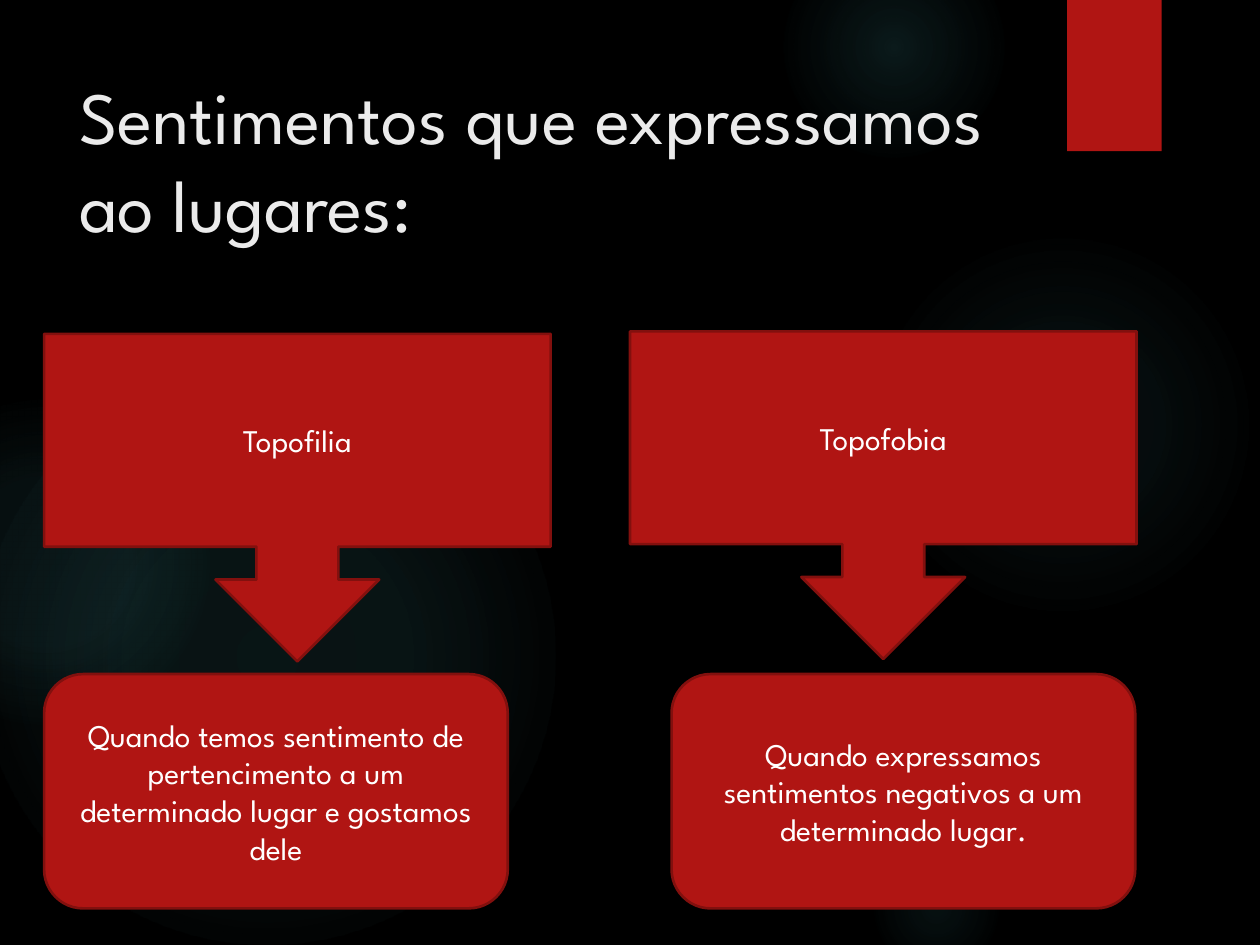
from lxml import etree
from pptx import Presentation
from pptx.dml.color import RGBColor
from pptx.enum.shapes import MSO_SHAPE as Shape
from pptx.enum.text import MSO_ANCHOR as Anchor, PP_ALIGN as Align
from pptx.oxml import parse_xml
from pptx.oxml.ns import nsdecls, qn
from pptx.util import Inches, Pt

GLOW, RED, DARK_RED = "50B9C1", "B01513", "82100E"
WHITE, OFF_WHITE, BLACK = "FFFFFF", "EBEBEB", "000000"


def rgb(hex_color):
    return RGBColor.from_string(hex_color)


class SlideBuilder:
    font_name = "League Spartan"

    def __init__(self, slide):
        self.slide = slide

    def background(self, color):
        fill = self.slide.background.fill
        fill.solid()
        fill.fore_color.rgb = rgb(color)

    def shape(self, kind, left, top, width, height, fill=RED):
        shape = self.slide.shapes.add_shape(
            kind, Inches(left), Inches(top), Inches(width), Inches(height))
        shape.shadow.inherit = False
        shape.fill.solid()
        shape.fill.fore_color.rgb = rgb(fill)
        shape.line.fill.background()
        return shape

    def glow(self, left, top, size, stops):
        """Circle fading outwards; stops are (position, opacity) in percent."""
        circle = self.shape(Shape.OVAL, left, top, size, size)
        stop_xml = "".join(
            f'<a:gs pos="{position * 1000}"><a:srgbClr val="{GLOW}">'
            f'<a:alpha val="{opacity * 1000}"/></a:srgbClr></a:gs>'
            for position, opacity in stops)
        gradient = parse_xml(
            f'<a:gradFill {nsdecls("a")} rotWithShape="1"><a:gsLst>{stop_xml}</a:gsLst>'
            '<a:path path="circle"><a:fillToRect l="50000" t="50000" r="50000" b="50000"/>'
            '</a:path></a:gradFill>')
        properties = circle._element.spPr
        properties.replace(properties.find(qn("a:solidFill")), gradient)

    def ribbon(self, left, top, width, height):
        ribbon = self.shape(Shape.RECTANGLE, left, top, width, height)
        effects = ribbon._element.spPr.find(qn("a:effectLst"))
        shadow = etree.SubElement(
            effects, qn("a:outerShdw"), blurRad=str(Pt(3)), dist=str(Pt(2)),
            dir="5400000", rotWithShape="0")
        color = etree.SubElement(shadow, qn("a:srgbClr"), val=BLACK)
        etree.SubElement(color, qn("a:alpha"), val="45000")

    def set_text(self, frame, text, size, color, align):
        frame.word_wrap = True
        frame.vertical_anchor = Anchor.MIDDLE
        paragraph = frame.paragraphs[0]
        paragraph.text = text
        paragraph.alignment = align
        paragraph.font.name = self.font_name
        paragraph.font.size = Pt(size)
        paragraph.font.color.rgb = rgb(color)

    def title(self, text, left, top, width, height):
        box = self.slide.shapes.add_textbox(
            Inches(left), Inches(top), Inches(width), Inches(height))
        self.set_text(box.text_frame, text, 42, OFF_WHITE, Align.LEFT)

    def card(self, kind, text, left, top, width, height):
        card = self.shape(kind, left, top, width, height)
        card.line.color.rgb = rgb(DARK_RED)
        card.line.width = Pt(1.5)
        self.set_text(card.text_frame, text, 18, WHITE, Align.CENTER)


def main():
    deck = Presentation()
    deck.slide_width, deck.slide_height = Inches(10), Inches(7.5)
    builder = SlideBuilder(deck.slides.add_slide(deck.slide_layouts[6]))

    builder.background(BLACK)
    glows = [
        (6.89, 1.83, 3.08, [(0, 7), (36, 6), (69, 0)]),
        (6.22, -0.5, 1.75, [(0, 14), (36, 7), (73, 0)]),
        (6.89, 6.67, 1.08, [(0, 9), (36, 5), (66, 0)]),
        (-0.17, 2.92, 4.58, [(0, 11), (36, 10), (75, 0)]),
        (-0.92, 3.17, 2.58, [(0, 8), (36, 8), (72, 0)]),
    ]
    for glow in glows:
        builder.glow(*glow)
    builder.ribbon(8.47, 0, 0.75, 1.2)
    builder.title("Sentimentos que expressamos ao lugares:", 0.53, 0.5, 7.72, 1.53)

    feelings = [
        ("Topofilia", 0.35, 2.65, 0.35,
         "Quando temos sentimento de pertencimento a um determinado lugar e gostamos dele"),
        ("Topofobia", 5, 2.63, 5.33,
         "Quando expressamos sentimentos negativos a um determinado lugar."),
    ]
    for feeling, callout_left, callout_top, meaning_left, meaning in feelings:
        builder.card(Shape.DOWN_ARROW_CALLOUT, feeling, callout_left, callout_top, 4.02, 2.6)
        builder.card(Shape.ROUNDED_RECTANGLE, meaning, meaning_left, 5.35, 3.68, 1.86)

    deck.save("out.pptx")


if __name__ == "__main__":
    main()
